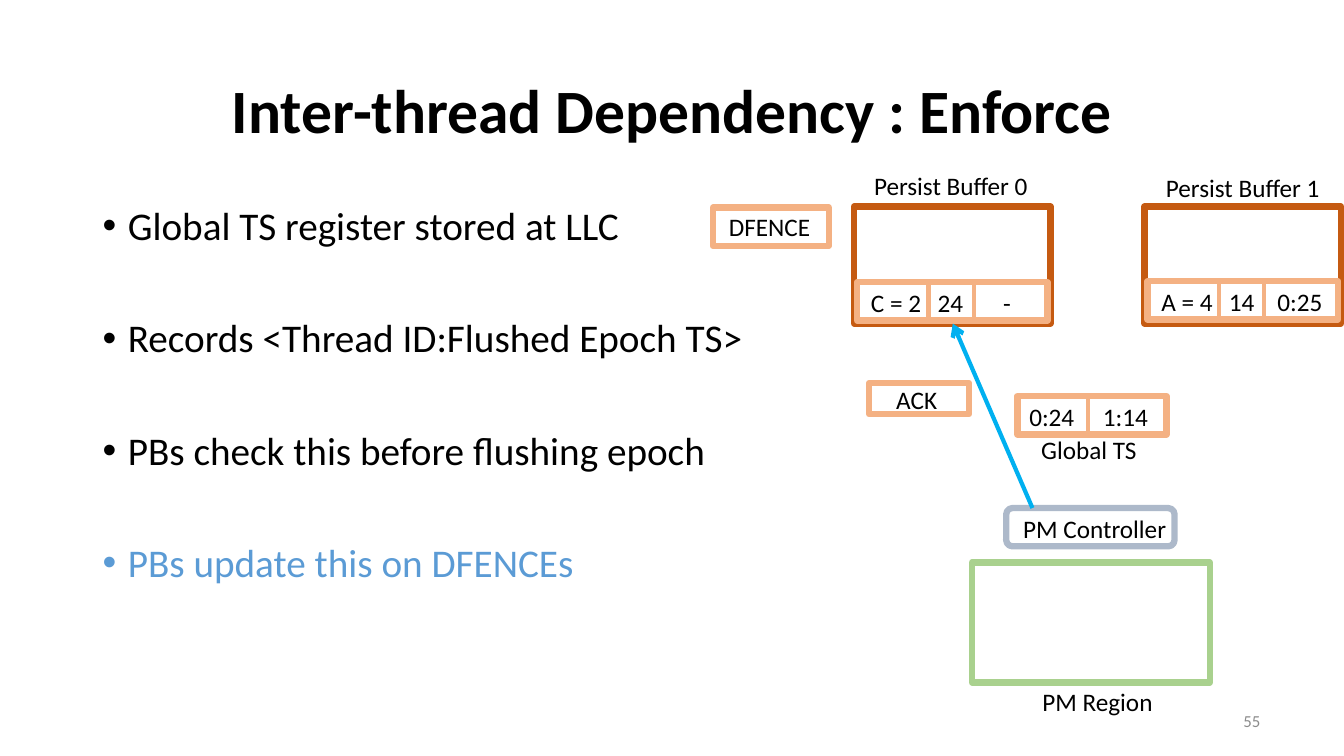
import pptx
import pptx.dml.color
import pptx.enum.shapes
import pptx.enum.text
import pptx.oxml.ns
import pptx.util
from lxml import etree

EMU_PER_PX = 9144
SLIDE_SIZE = (1333, 750)
COLOURS = {
    "black": "000000", "white": "FFFFFF", "highlight": "5B9BD5", "number": "8C8C8C",
    "buffer": "C55A11", "entry": "F4B183", "controller": "ADB9CA",
    "region": "A9D18E", "arrow": "00B0F0",
}
ALIGN = pptx.enum.text.PP_ALIGN
ANCHOR = pptx.enum.text.MSO_ANCHOR
SHAPE = pptx.enum.shapes.MSO_SHAPE
STRAIGHT = pptx.enum.shapes.MSO_CONNECTOR.STRAIGHT

FORMATS = {
    "title": {"font": {"size": pptx.util.Pt(44), "bold": True},
              "paragraph": {"alignment": ALIGN.CENTER, "line_spacing": 0.9},
              "frame": {"vertical_anchor": ANCHOR.MIDDLE}},
    "point": {"font": {"size": pptx.util.Pt(28)},
              "paragraph": {"line_spacing": 0.9, "space_before": pptx.util.Pt(50)},
              "frame": {}},
    "number": {"font": {"size": pptx.util.Pt(12)},
               "paragraph": {"alignment": ALIGN.RIGHT},
               "frame": {"vertical_anchor": ANCHOR.MIDDLE}},
    "label": {"font": {"size": pptx.util.Pt(18)}, "paragraph": {}, "frame": {}},
    "caption": {"font": {"size": pptx.util.Pt(18)},
                "paragraph": {"alignment": ALIGN.CENTER}, "frame": {}},
}

TITLE = ("Inter-thread Dependency : Enforce", (92, 40, 1150, 145))
POINTS = [
    ("Global TS register stored at LLC", "black"),
    ("Records <Thread ID:Flushed Epoch TS>", "black"),
    ("PBs check this before flushing epoch", "black"),
    ("PBs update this on DFENCEs", "highlight"),
]
POINTS_AREA = (92, 200, 673, 476)
POINT_INDENT = 25
PAGE_NUMBER = ("55", (960, 695, 300, 40))

BUFFERS = [
    ("Persist Buffer 1", 1135, (1145, 166, 175, 40), 279, ["A = 4", "14", "0:25"], [67, 115]),
    ("Persist Buffer 0", 847, (854, 164, 178, 40), 280, ["C = 2", "24", "-"], [66, 131]),
]
BUFFER_TOP, BUFFER_WIDTH, BUFFER_HEIGHT = 205, 195, 116
ENTRY_INSET, ENTRY_WIDTH, ENTRY_HEIGHT = 3, 189, 38
DIVIDER_OFFSETS = (74, 119)
GLOBAL_TS = (1009, 393, 148, 38)
GLOBAL_DIVIDER = 70
GLOBAL_VALUES, GLOBAL_TABS = ["0:24", "1:14"], [73]
BOXES = [
    (SHAPE.RECTANGLE, (964, 558, 236, 119), "region"),
    (SHAPE.ROUNDED_RECTANGLE, (998, 504, 167, 38), "controller"),
    (SHAPE.RECTANGLE, (707, 206, 115, 38), "entry"),
    (SHAPE.RECTANGLE, (862, 380, 99, 31), "entry"),
]
LABELS = [
    ("PM Controller", (1005, 504, 190, 40), "label"),
    ("PM Region", (1024, 676, 190, 40), "label"),
    ("DFENCE", (713, 205, 121, 40), "label"),
    ("ACK", (879, 376, 102, 40), "label"),
    ("Global TS", (998, 426, 164, 40), "caption"),
]
ACK_ARROW = ((945, 321), (1024, 504))

deck = pptx.Presentation()
deck.slide_width, deck.slide_height = (side * EMU_PER_PX for side in SLIDE_SIZE)
slide = deck.slides.add_slide(deck.slide_layouts[6])


def emu(lengths):
    return [length * EMU_PER_PX for length in lengths]


def colour(name):
    return pptx.dml.color.RGBColor.from_string(COLOURS[name])


def add_xml(parent, tag, **attributes):
    return etree.SubElement(parent, pptx.oxml.ns.qn(tag), attributes)


def apply(target, values):
    for name, value in values.items():
        setattr(target, name, value)


def write(paragraph, text, style, tint="black"):
    run = paragraph.add_run()
    run.text = text
    run.font.name = "Calibri"
    run.font.color.rgb = colour(tint)
    apply(run.font, FORMATS[style]["font"])
    apply(paragraph, FORMATS[style]["paragraph"])


def add_frame(area, style):
    frame = slide.shapes.add_textbox(*emu(area)).text_frame
    frame.word_wrap = True
    apply(frame, FORMATS[style]["frame"])
    return frame


def add_label(text, area, style, tint="black"):
    paragraph = add_frame(area, style).paragraphs[0]
    write(paragraph, text, style, tint)
    return paragraph


def add_box(kind, area, outline):
    box = slide.shapes.add_shape(kind, *emu(area))
    box.shadow.inherit = False
    box.fill.solid()
    box.fill.fore_color.rgb = colour("white")
    box.line.color.rgb = colour(outline)
    box.line.width = pptx.util.Pt(4.5)


def add_line(start, end, tint):
    line = slide.shapes.add_connector(STRAIGHT, *emu(start + end))
    line.line.color.rgb = colour(tint)
    line.line.width = pptx.util.Pt(3)
    add_xml(line._element.spPr, "a:effectLst")
    return line


def add_entry(area, dividers, values, tabs, text_inset):
    left, top, width, height = area
    add_box(SHAPE.RECTANGLE, area, "entry")
    values_area = (left + text_inset, top, width, height + 2)
    paragraph = add_label("\t".join(values), values_area, "label")
    stops = add_xml(paragraph._p.get_or_add_pPr(), "a:tabLst")
    for tab in tabs:
        add_xml(stops, "a:tab", pos=str(tab * EMU_PER_PX), algn="l")
    for offset in dividers:
        add_line((left + offset, top), (left + offset, top + height), "entry")


add_label(*TITLE, "title")
points_frame = add_frame(POINTS_AREA, "point")
for index, (text, tint) in enumerate(POINTS):
    paragraph = points_frame.add_paragraph() if index else points_frame.paragraphs[0]
    write(paragraph, text, "point", tint)
    if index == 0:
        paragraph.space_before = pptx.util.Pt(0)
    properties = paragraph._p.get_or_add_pPr()
    properties.set("marL", str(POINT_INDENT * EMU_PER_PX))
    properties.set("indent", str(-POINT_INDENT * EMU_PER_PX))
    add_xml(properties, "a:buFont", typeface="Arial")
    add_xml(properties, "a:buChar", char="•")
add_label(*PAGE_NUMBER, "number", "number")

for name, left, name_area, entry_top, values, tabs in BUFFERS:
    add_label(name, name_area, "caption")
    add_box(SHAPE.RECTANGLE, (left, BUFFER_TOP, BUFFER_WIDTH, BUFFER_HEIGHT), "buffer")
    entry_area = (left + ENTRY_INSET, entry_top, ENTRY_WIDTH, ENTRY_HEIGHT)
    dividers = [offset - ENTRY_INSET for offset in DIVIDER_OFFSETS]
    add_entry(entry_area, dividers, values, tabs, 4)
add_entry(GLOBAL_TS, [GLOBAL_DIVIDER], GLOBAL_VALUES, GLOBAL_TABS, 2)

for box in BOXES:
    add_box(*box)
for label in LABELS:
    add_label(*label)
ack_arrow = add_line(*ACK_ARROW, "arrow")
add_xml(ack_arrow.line._get_or_add_ln(), "a:headEnd", type="arrow")

deck.save("out.pptx")
